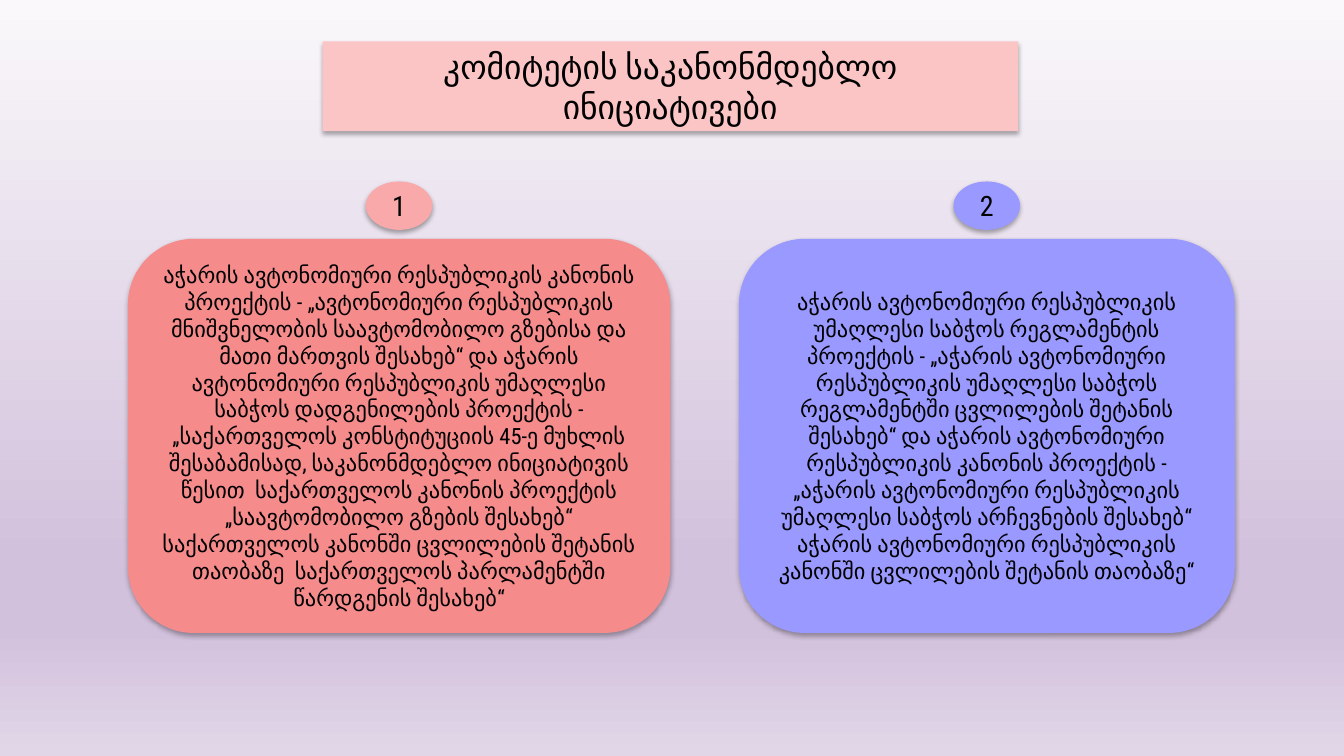
from copy import deepcopy

from lxml.etree import SubElement
from pptx import Presentation
from pptx.dml.color import RGBColor
from pptx.enum.shapes import MSO_SHAPE
from pptx.enum.text import MSO_ANCHOR, MSO_AUTO_SIZE, PP_ALIGN
from pptx.oxml.ns import qn
from pptx.util import Pt

FONT = "Roboto Condensed"
BLACK = RGBColor(0x00, 0x00, 0x00)
TITLE_PINK = RGBColor(0xFB, 0xC5, 0xC5)
BADGE_PINK = RGBColor(0xF9, 0xA9, 0xA9)
CORAL = RGBColor(0xF6, 0x8B, 0x8C)
PERIWINKLE = RGBColor(0x99, 0x99, 0xFF)
BACKGROUND = [
    (0, RGBColor(0xFA, 0xF8, 0xFB)),
    (74, RGBColor(0xD2, 0xC1, 0xDC)),
    (83, RGBColor(0xD2, 0xC1, 0xDC)),
    (100, RGBColor(0xE1, 0xD6, 0xE8)),
]

TITLE = "კომიტეტის საკანონმდებლო ინიციატივები"
# left, width, panel colour, badge colour, text
INITIATIVES = [
    (91.4, 387.4, CORAL, BADGE_PINK,
     "აჭარის ავტონომიური რესპუბლიკის კანონის პროექტის - „ავტონომიური "
     "რესპუბლიკის მნიშვნელობის საავტომობილო გზებისა და მათი მართვის შესახებ“ "
     "და აჭარის ავტონომიური რესპუბლიკის უმაღლესი საბჭოს დადგენილების "
     "პროექტის - „საქართველოს კონსტიტუციის 45-ე მუხლის შესაბამისად, "
     "საკანონმდებლო ინიციატივის წესით  საქართველოს კანონის პროექტის "
     "„საავტომობილო გზების შესახებ“ საქართველოს კანონში ცვლილების შეტანის "
     "თაობაზე  საქართველოს პარლამენტში წარდგენის შესახებ“"),
    (527.8, 354.2, PERIWINKLE, PERIWINKLE,
     "აჭარის ავტონომიური რესპუბლიკის უმაღლესი საბჭოს რეგლამენტის პროექტის - "
     "„აჭარის ავტონომიური რესპუბლიკის უმაღლესი საბჭოს რეგლამენტში ცვლილების "
     "შეტანის შესახებ“ და აჭარის ავტონომიური რესპუბლიკის კანონის პროექტის - "
     "„აჭარის ავტონომიური რესპუბლიკის უმაღლესი საბჭოს არჩევნების შესახებ“ "
     "აჭარის ავტონომიური რესპუბლიკის კანონში ცვლილების შეტანის თაობაზე“"),
]
PANEL_TOP, PANEL_HEIGHT = 170.6, 281.5
BADGE_TOP, BADGE_WIDTH, BADGE_HEIGHT = 129.6, 47.5, 34.6


def paint_background(slide):
    fill = slide.background.fill
    fill.gradient()
    fill.gradient_angle = 270
    stop_list = slide.element.find(".//" + qn("a:gsLst"))
    while len(stop_list) < len(BACKGROUND):
        stop_list.append(deepcopy(stop_list[0]))
    for stop, (percent, color) in zip(fill.gradient_stops, BACKGROUND):
        stop.position = percent / 100
        stop.color.rgb = color


def add_soft_shadow(shape):
    shape.shadow.inherit = False
    effects = shape.element.spPr.find(qn("a:effectLst"))
    shadow = SubElement(effects, qn("a:outerShdw"), blurRad=str(Pt(3.5)),
                        dist=str(Pt(2.2)), dir="5400000", algn="ctr",
                        rotWithShape="0")
    color = SubElement(shadow, qn("a:srgbClr"), val=str(BLACK))
    SubElement(color, qn("a:alpha"), val="32000")


def dress(shape, color, text, size):
    """Give a shape its fill, shadow and centred text."""
    shape.fill.solid()
    shape.fill.fore_color.rgb = color
    shape.line.fill.background()
    add_soft_shadow(shape)
    frame = shape.text_frame
    frame.text = text
    frame.word_wrap = True
    frame.auto_size = MSO_AUTO_SIZE.NONE
    frame.vertical_anchor = MSO_ANCHOR.MIDDLE
    paragraph = frame.paragraphs[0]
    paragraph.alignment = PP_ALIGN.CENTER
    paragraph.font.name = FONT
    paragraph.font.size = Pt(size)
    paragraph.font.color.rgb = BLACK


def add_title(slide):
    title = slide.shapes.title
    title.left, title.top = Pt(230.4), Pt(29.5)
    title.width, title.height = Pt(496.8), Pt(64.1)
    outline = SubElement(title.element.spPr, qn("a:prstGeom"), prst="roundRect")
    SubElement(outline, qn("a:avLst"))
    dress(title, TITLE_PINK, TITLE, 24)


def add_initiative(slide, number, left, width, panel_color, badge_color, text):
    panel = slide.shapes.add_shape(
        MSO_SHAPE.ROUNDED_RECTANGLE,
        Pt(left), Pt(PANEL_TOP), Pt(width), Pt(PANEL_HEIGHT))
    dress(panel, panel_color, text, 16)
    badge_left = left + (width - BADGE_WIDTH) / 2
    badge = slide.shapes.add_shape(
        MSO_SHAPE.OVAL,
        Pt(badge_left), Pt(BADGE_TOP), Pt(BADGE_WIDTH), Pt(BADGE_HEIGHT))
    dress(badge, badge_color, str(number), 20)


def main():
    presentation = Presentation()
    presentation.slide_width, presentation.slide_height = Pt(960), Pt(540)
    slide = presentation.slides.add_slide(presentation.slide_layouts[5])
    paint_background(slide)
    add_title(slide)
    for number, initiative in enumerate(INITIATIVES, start=1):
        add_initiative(slide, number, *initiative)
    presentation.save("out.pptx")


if __name__ == "__main__":
    main()
